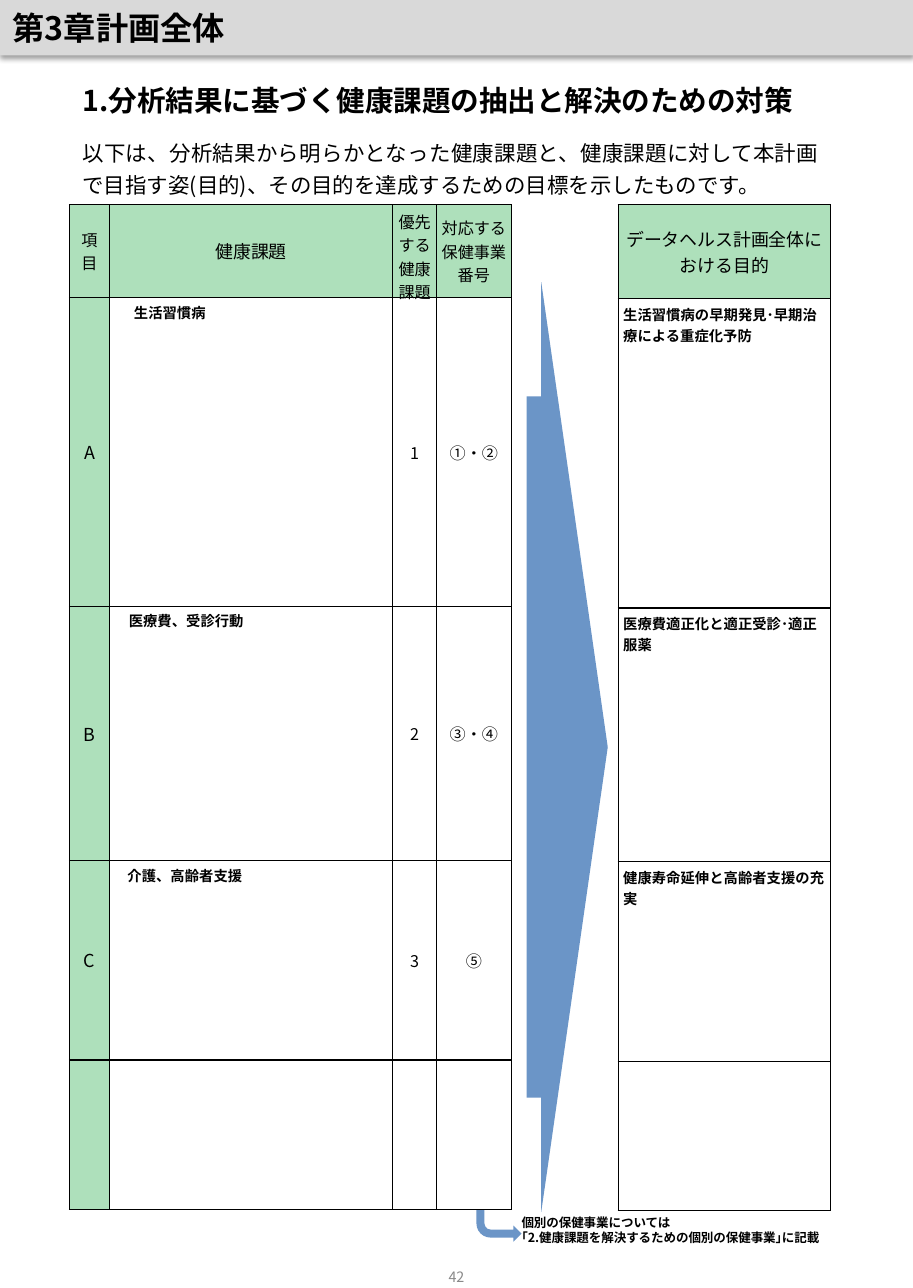
from lxml.etree import SubElement
from pptx import Presentation
from pptx.dml.color import RGBColor
from pptx.enum.lang import MSO_LANGUAGE_ID
from pptx.enum.shapes import MSO_SHAPE
from pptx.enum.text import MSO_ANCHOR, PP_ALIGN
from pptx.oxml.ns import qn
from pptx.util import Inches, Pt

THEME = {
    "font": "Noto Sans CJK JP",
    "black": "000000", "white": "FFFFFF", "band": "D9D9D9", "green": "AEE0BB",
    "blue": "6B95C7", "grey": "898989",
    "chapter": 18, "heading": 16, "intro": 12, "large": 10, "label": 9, "item": 8, "note": 7,
}
LEFT, CENTER, JUSTIFY = PP_ALIGN.LEFT, PP_ALIGN.CENTER, PP_ALIGN.JUSTIFY
TOP, MIDDLE = MSO_ANCHOR.TOP, MSO_ANCHOR.MIDDLE
CELL_INSETS = (0.04,) * 4

CHAPTER = "第3章計画全体"
HEADING = "1.分析結果に基づく健康課題の抽出と解決のための対策"
INTRO = ("以下は、分析結果から明らかとなった健康課題と、健康課題に対して本計画で目指す姿(目的)、"
         "その目的を達成するための目標を示したものです。")
NOTE = ["個別の保健事業については", "｢2.健康課題を解決するための個別の保健事業｣に記載"]
PAGE_NUMBER = "42"

ISSUE_ROWS = [
    ("項目", "健康課題", "優先する健康課題", "対応する保健事業番号"),
    ("A", "", "1", "①・②"),
    ("B", "", "2", "③・④"),
    ("C", "", "3", "⑤"),
    ("", "", "", ""),
]
GOAL_ROWS = [
    ("データヘルス計画全体における目的",),
    ("生活習慣病の早期発見･早期治療による重症化予防",),
    ("医療費適正化と適正受診･適正服薬",),
    ("健康寿命延伸と高齢者支援の充実",),
    ("",),
]
ISSUE_NAMES = [  # text, left, top, width, height
    ("生活習慣病", 1, 2.32, 2.19, 2.25),
    ("医療費、受診行動", 0.96, 4.71, 2.19, 1.99),
    ("介護、高齢者支援", 0.95, 6.69, 2.2, 1.57),
]
TABLE_TOP = 1.59
BODY_HEIGHTS = [2.4, 1.97, 1.55, 1.16]
ISSUE_WIDTHS = [0.31, 2.2, 0.34, 0.58]


def color(name):
    return RGBColor.from_string(THEME[name])


def write(frame, texts, size, ink="black", bold=False, **paragraph_format):
    for index, text in enumerate(texts):
        para = frame.add_paragraph() if index else frame.paragraphs[0]
        for name, value in paragraph_format.items():
            setattr(para, name, value)
        span = para.add_run()
        span.text = text
        values = {"name": THEME["font"], "size": Pt(THEME[size]), "bold": bold,
                  "language_id": MSO_LANGUAGE_ID.JAPANESE}
        for name, value in values.items():
            setattr(span.font, name, value)
        span.font.color.rgb = color(ink)
        SubElement(span.font._element, qn("a:ea"), typeface=THEME["font"])


def set_margins(target, insets):
    for side, inset in zip(("left", "top", "right", "bottom"), insets):
        setattr(target, "margin_" + side, Inches(inset))


def add_text(page, at, texts, size, insets=(0.1, 0.05, 0.1, 0.05), anchor=MIDDLE, **formats):
    box = page.shapes.add_textbox(*map(Inches, at))
    fill_frame(box, texts, size, insets, anchor, **formats)


def fill_frame(box, texts, size, insets, anchor, **formats):
    frame = box.text_frame
    frame.word_wrap = True
    frame.vertical_anchor = anchor
    set_margins(frame, insets)
    write(frame, texts, size, **formats)


def add_block(page, kind, at, fill):
    block = page.shapes.add_shape(kind, *map(Inches, at))
    block.shadow.inherit = False
    block.fill.solid()
    block.fill.fore_color.rgb = color(fill)
    block.line.fill.background()
    return block


def add_soft_shadow(block):
    effects = block._element.spPr.find(qn("a:effectLst"))
    shadow = SubElement(effects, qn("a:outerShdw"), blurRad=str(Pt(3.1)), dist=str(Pt(1.6)),
                        dir="5400000", algn="t", rotWithShape="0")
    ink = SubElement(shadow, qn("a:srgbClr"), val=THEME["black"])
    SubElement(ink, qn("a:alpha"), val="38000")


def add_borders(cell):
    properties = cell._tc.get_or_add_tcPr()
    for side in "LRTB":
        line = SubElement(properties, qn("a:ln" + side), w=str(Pt(0.75)))
        fill = SubElement(line, qn("a:solidFill"))
        SubElement(fill, qn("a:srgbClr"), val=THEME["black"])


def add_grid(page, left, widths, heights, rows, style_of):
    """style_of(row, column) gives fill (or None), anchor and text formats of a cell."""
    at = (left, TABLE_TOP, sum(widths), sum(heights))
    table = page.shapes.add_table(len(rows), len(widths), *map(Inches, at)).table
    table.first_row = table.horz_banding = False
    for column, width in zip(table.columns, widths):
        column.width = Inches(width)
    for row, height in zip(table.rows, heights):
        row.height = Inches(height)
    for r, texts in enumerate(rows):
        for c, text in enumerate(texts):
            cell = table.cell(r, c)
            fill, anchor, formats = style_of(r, c)
            add_borders(cell)
            if fill:
                cell.fill.solid()
                cell.fill.fore_color.rgb = color(fill)
            else:
                cell.fill.background()
            cell.vertical_anchor = anchor
            set_margins(cell, CELL_INSETS)
            if text:
                write(cell.text_frame, [text], **formats)


def issue_style(row, column):
    large = (row == 0) == (column == 1) and column < 2
    fill = "green" if row == 0 or column == 0 else None
    return fill, MIDDLE, {"size": "large" if large else "label", "alignment": CENTER}


def goal_style(row, column):
    if row == 0:
        return "green", MIDDLE, {"size": "large", "alignment": CENTER}
    return None, TOP, {"size": "item", "bold": True, "alignment": LEFT}


def main():
    deck = Presentation()
    deck.slide_width, deck.slide_height = Inches(7.09), Inches(10)
    page = deck.slides.add_slide(deck.slide_layouts[6])

    band = add_block(page, MSO_SHAPE.RECTANGLE, (0, 0, 7.09, 0.43), "band")
    add_soft_shadow(band)
    fill_frame(band, [CHAPTER], "chapter", (0.1, 0.05, 0.1, 0.05), MIDDLE,
               bold=True, alignment=LEFT)
    add_text(page, (2.72, 9.65, 1.65, 0.53), [PAGE_NUMBER], "item", ink="grey", alignment=CENTER)
    intro = add_block(page, MSO_SHAPE.RECTANGLE, (0.64, 0.99, 5.82, 0.57), "white")
    fill_frame(intro, [INTRO], "intro", (0, 0.05, 0.1, 0.05), TOP,
               alignment=JUSTIFY, line_spacing=1.25)

    note_arrow = add_block(page, MSO_SHAPE.BENT_ARROW, (3.7, 9.39, 0.35, 0.25), "blue")
    note_arrow._element.spPr.xfrm.set("flipV", "1")
    add_text(page, (4.05, 9.38, 2.41, 0.34), NOTE, "note", (0, 0.05, 0, 0.05), bold=True)

    goal_arrow = add_block(page, MSO_SHAPE.RIGHT_ARROW, (4.09, 2.19, 0.63, 7.22), "blue")
    goal_arrow.adjustments[0], goal_arrow.adjustments[1] = 0.754, 0.82
    for name, *at in ISSUE_NAMES:
        add_text(page, at, [name], "item", CELL_INSETS, TOP, bold=True,
                 alignment=JUSTIFY, space_after=Pt(4))

    add_grid(page, 4.8, [1.65], [0.73] + BODY_HEIGHTS, GOAL_ROWS, goal_style)
    add_text(page, (0.64, 0.59, 6.32, 0.37), [HEADING], "heading", (0, 0.05, 0, 0.05), bold=True)
    add_grid(page, 0.54, ISSUE_WIDTHS, [0.72] + BODY_HEIGHTS, ISSUE_ROWS, issue_style)
    deck.save("out.pptx")


if __name__ == "__main__":
    main()
